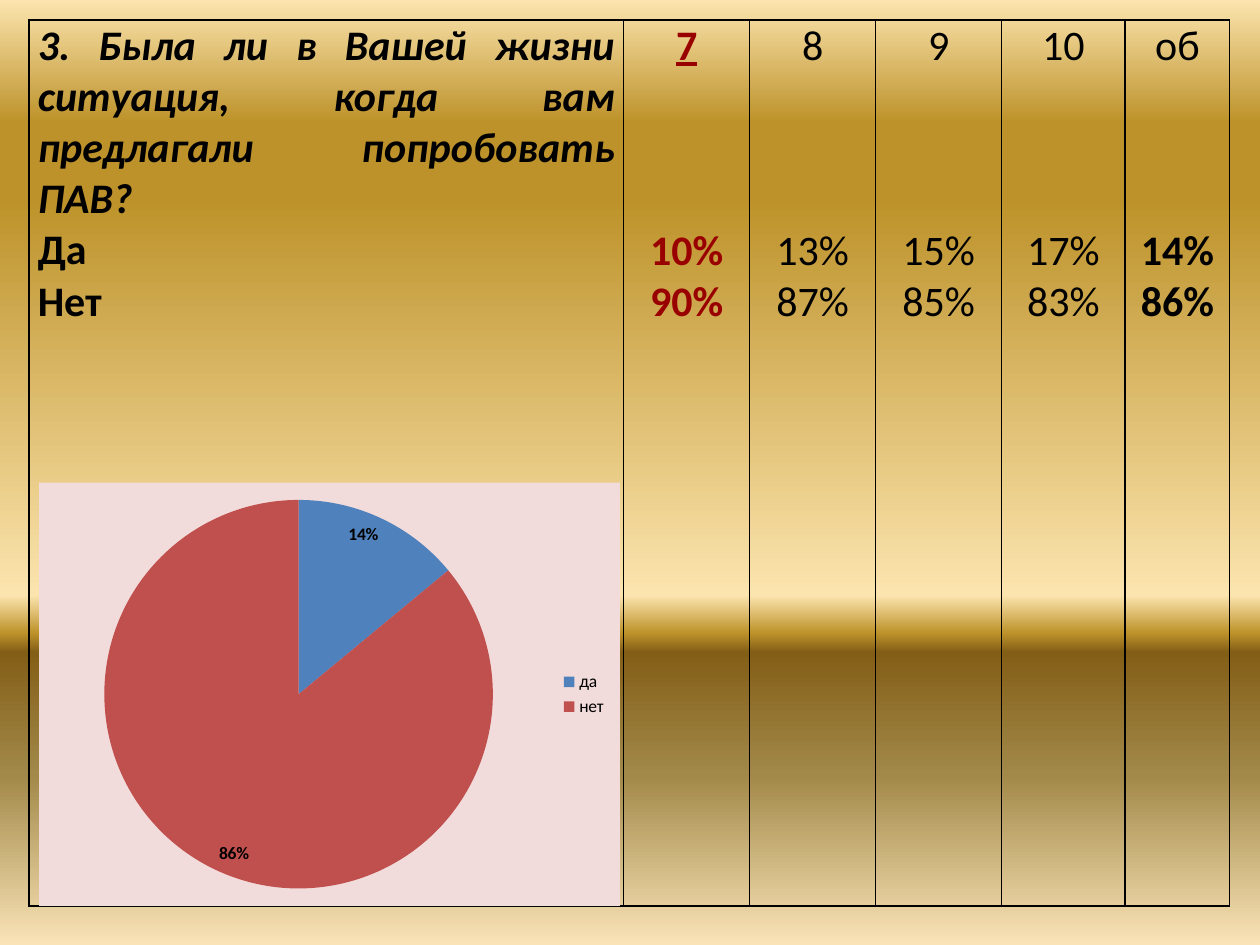
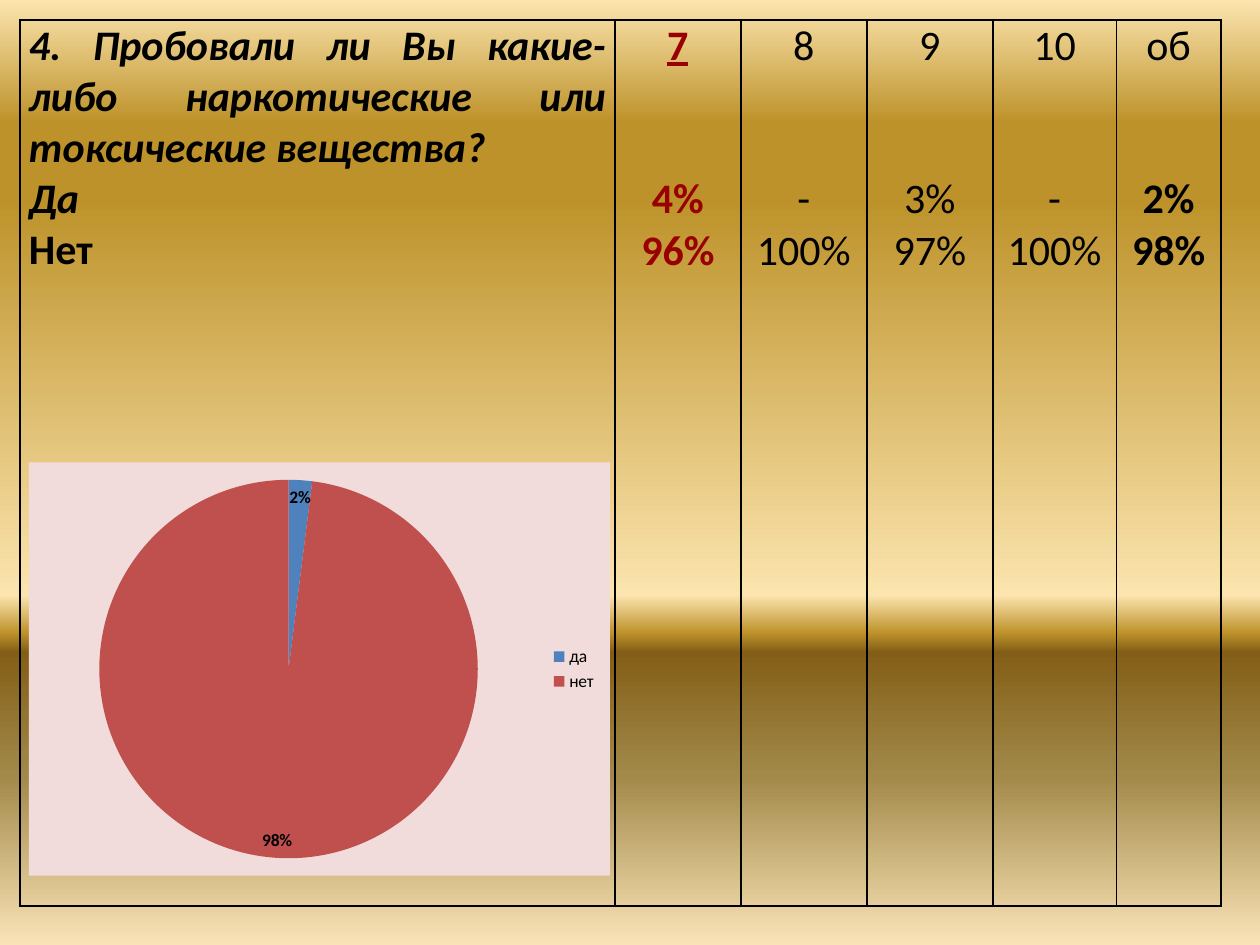
from dataclasses import dataclass

from lxml import etree
from pptx import Presentation
from pptx.chart.data import CategoryChartData
from pptx.dml.color import RGBColor
from pptx.enum.chart import XL_CHART_TYPE, XL_LABEL_POSITION, XL_LEGEND_POSITION
from pptx.enum.text import PP_ALIGN
from pptx.oxml import parse_xml
from pptx.oxml.ns import nsdecls, qn
from pptx.util import Inches, Pt

FONT = "Calibri"
TEXT_SIZE = 24
LINE_PITCH = 29.3  # points taken by one line of table text
BLACK = RGBColor(0x00, 0x00, 0x00)
DARK_RED = RGBColor(0x99, 0x00, 0x00)
CHART_PINK = RGBColor(0xF2, 0xDC, 0xDB)
SLICE_COLOURS = [RGBColor(0x4F, 0x81, 0xBD), RGBColor(0xC0, 0x50, 0x4D)]
GOLD_STOPS = [
    (0, RGBColor(0xFB, 0xE4, 0xAE)), (13, RGBColor(0xBD, 0x92, 0x2A)),
    (21, RGBColor(0xBD, 0x92, 0x2A)), (63, RGBColor(0xFB, 0xE4, 0xAE)),
    (67, RGBColor(0xBD, 0x92, 0x2A)), (69, RGBColor(0x83, 0x5E, 0x17)),
    (82, RGBColor(0xA2, 0x89, 0x49)), (100, RGBColor(0xFA, 0xE3, 0xB7)),
]
COLUMN_WIDTHS = [4.72, 1, 1, 1, 0.98, 0.83]
GRADES = ["7", "8", "9", "10", "об"]
HIGHLIGHTED = "7"
OVERALL = "об"


@dataclass
class Survey:
    question: str
    question_lines: int
    yes_italic: bool
    yes: list
    no: list
    shares: tuple
    table_box: tuple
    chart_box: tuple


SURVEYS = [
    Survey("3. Была ли в Вашей жизни ситуация, когда вам предлагали попробовать ПАВ?",
           4, False,
           ["10%", "13%", "15%", "17%", "14%"], ["90%", "87%", "85%", "83%", "86%"],
           (0.14, 0.86), (0.23, 0.16, 9.53, 7.03), (0.31, 3.83, 4.61, 3.36)),
    Survey("4. Пробовали ли Вы какие-либо наркотические или токсические вещества?",
           3, True,
           ["4%", "-", "3%", "-", "2%"], ["96%", "100%", "97%", "100%", "98%"],
           (0.02, 0.98), (0.16, 0.16, 9.53, 7.03), (0.23, 3.67, 4.61, 3.28)),
]


def set_gold_background(master):
    fill = master.background.fill
    fill.gradient()
    fill.gradient_angle = 270
    stops = next(master.element.iter(qn("a:gsLst")))
    for stop in list(stops):
        stops.remove(stop)
    for position, colour in GOLD_STOPS:
        stop = etree.SubElement(stops, qn("a:gs"), pos=str(position * 1000))
        etree.SubElement(stop, qn("a:srgbClr"), val=str(colour))


def format_cell(cell):
    """Clear the fill, set the margins and draw a thin black border."""
    cell.fill.background()
    cell.margin_left = cell.margin_right = Inches(0.07)
    cell.margin_top = cell.margin_bottom = 0
    properties = cell._tc.get_or_add_tcPr()
    for index, side in enumerate(("lnL", "lnR", "lnT", "lnB")):
        properties.insert(index, parse_xml(
            f'<a:{side} {nsdecls("a")} w="{Pt(1)}"><a:solidFill>'
            f'<a:srgbClr val="{BLACK}"/></a:solidFill></a:{side}>'))


def write_cell(cell, lines, alignment, colour=BLACK):
    """Write one paragraph for each (text, bold, italic) line."""
    frame = cell.text_frame
    frame.text = "\n".join(text for text, _, _ in lines)
    for paragraph, (_, bold, italic) in zip(frame.paragraphs, lines):
        paragraph.alignment = alignment
        font = paragraph.font
        font.name, font.size = FONT, Pt(TEXT_SIZE)
        font.bold, font.italic = bold, italic
        font.color.rgb = colour
    return frame.paragraphs


def add_answer_table(slide, box, survey):
    frame = slide.shapes.add_table(1, len(COLUMN_WIDTHS), *map(Inches, box))
    table = frame.table
    table.first_row = table.horz_banding = False
    for column, width in zip(table.columns, COLUMN_WIDTHS):
        column.width = Inches(width)
    question_cell, *grade_cells = table.rows[0].cells
    format_cell(question_cell)
    write_cell(question_cell,
               [(survey.question, True, True), ("Да", True, survey.yes_italic),
                ("Нет", True, False)], PP_ALIGN.JUSTIFY)
    for cell, grade, yes, no in zip(grade_cells, GRADES, survey.yes, survey.no):
        highlighted = grade == HIGHLIGHTED
        bold = highlighted or grade == OVERALL
        format_cell(cell)
        heading, yes_line, _ = write_cell(
            cell, [(grade, highlighted, False), (yes, bold, False), (no, bold, False)],
            PP_ALIGN.CENTER, DARK_RED if highlighted else BLACK)
        heading.font.underline = highlighted
        yes_line.space_before = Pt((survey.question_lines - 1) * LINE_PITCH)


def add_share_pie(slide, box, shares):
    chart_data = CategoryChartData(number_format="0%")
    chart_data.categories = ["да", "нет"]
    chart_data.add_series("Series 1", shares)
    chart = slide.shapes.add_chart(
        XL_CHART_TYPE.PIE, *map(Inches, box), chart_data).chart
    chart.has_title = False
    chart.font.name, chart.font.size = FONT, Pt(10)
    chart.font.color.rgb = BLACK
    chart.has_legend = True
    chart.legend.position = XL_LEGEND_POSITION.RIGHT
    chart.legend.include_in_layout = False

    plot = chart.plots[0]
    plot.vary_by_categories = True
    for index, colour in enumerate(SLICE_COLOURS):
        fill = plot.series[0].points[index].format.fill
        fill.solid()
        fill.fore_color.rgb = colour
    plot.has_data_labels = True
    labels = plot.data_labels
    labels.show_value, labels.show_percentage = True, False
    labels.number_format, labels.number_format_is_linked = "0%", False
    labels.position = XL_LABEL_POSITION.INSIDE_END
    labels.font.name, labels.font.size, labels.font.bold = FONT, Pt(10), True
    labels.font.color.rgb = BLACK

    chart.element.find(qn("c:chart")).addnext(parse_xml(
        f'<c:spPr {nsdecls("c", "a")}><a:solidFill><a:srgbClr val="{CHART_PINK}"/>'
        '</a:solidFill><a:ln><a:noFill/></a:ln></c:spPr>'))


def add_survey_slide(presentation, survey):
    blank_layout = presentation.slide_layouts.get_by_name("Blank")
    slide = presentation.slides.add_slide(blank_layout)
    add_answer_table(slide, survey.table_box, survey)
    add_share_pie(slide, survey.chart_box, survey.shares)


def main():
    presentation = Presentation()
    presentation.slide_width, presentation.slide_height = Inches(10), Inches(7.5)
    set_gold_background(presentation.slide_master)
    for survey in SURVEYS:
        add_survey_slide(presentation, survey)
    presentation.save("out.pptx")


if __name__ == "__main__":
    main()
